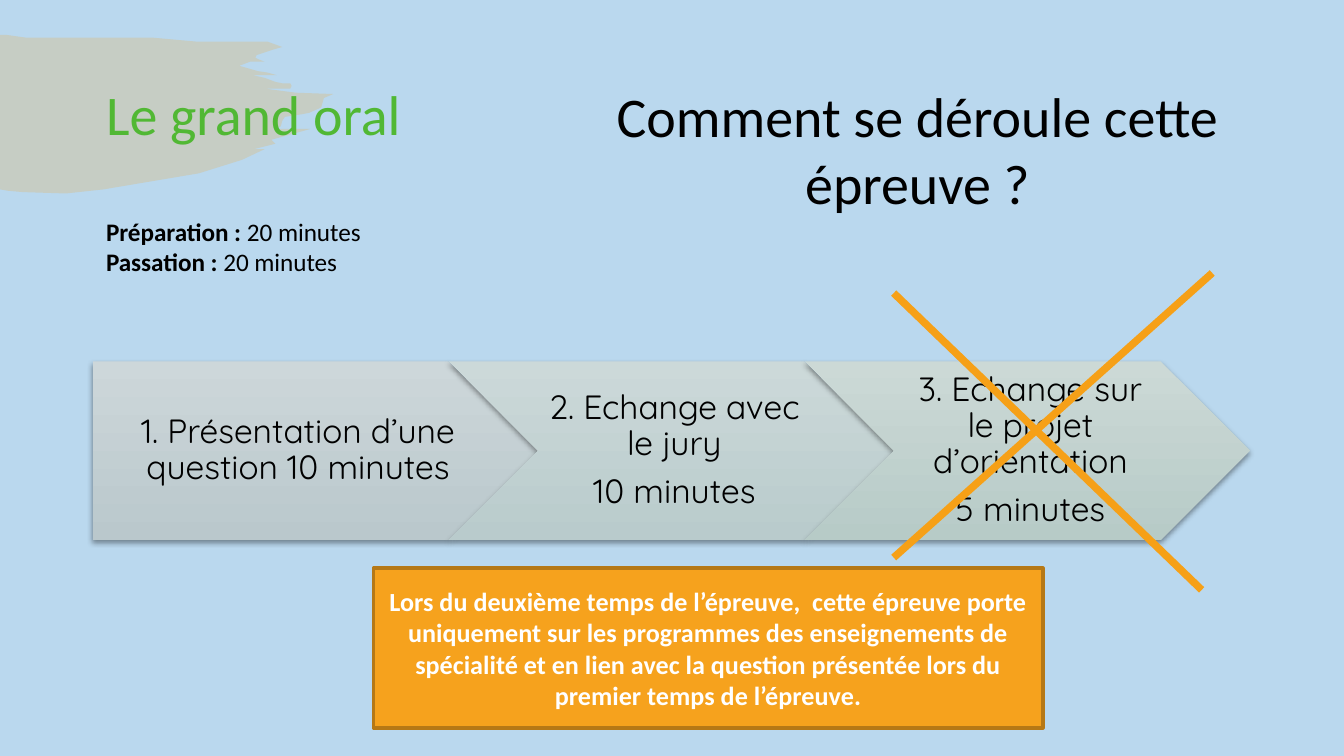
from lxml import etree
from pptx import Presentation
from pptx.dml.color import RGBColor
from pptx.enum.shapes import MSO_CONNECTOR, MSO_SHAPE
from pptx.enum.text import MSO_ANCHOR, MSO_AUTO_SIZE, PP_ALIGN
from pptx.oxml.ns import qn
from pptx.util import Cm, Pt

LEFT, CENTER = PP_ALIGN.LEFT, PP_ALIGN.CENTER
TOP, MIDDLE = MSO_ANCHOR.TOP, MSO_ANCHOR.MIDDLE
PENTAGON, CHEVRON = MSO_SHAPE.PENTAGON, MSO_SHAPE.CHEVRON
RECTANGLE = MSO_SHAPE.RECTANGLE
STRAIGHT = MSO_CONNECTOR.STRAIGHT

# Outline of the brush stroke, in hundredths of an inch
BRUSH_UNIT = Cm(0.0254)
BRUSH_OUTLINE = [
    (0, 26), (5, 26), (19, 28), (50, 28), (76, 28), (113, 28), (146, 31),
    (186, 31), (199, 31), (210, 35), (203, 37), (191, 41), (190, 43), (192, 44),
    (197, 46), (186, 46), (178, 49), (185, 51), (192, 53), (199, 54), (206, 56),
    (188, 56), (197, 58), (205, 61), (210, 62), (216, 62), (217, 64), (216, 66),
    (213, 66), (197, 66), (220, 69), (248, 70), (241, 73), (239, 80), (230, 84),
    (225, 85), (212, 87), (210, 90), (209, 94), (205, 96), (231, 96), (202, 104),
    (205, 107), (189, 111), (197, 111), (180, 119), (148, 129), (77, 141),
    (49, 144), (17, 143), (6, 142), (0, 141),
]

STEPS = [
    (PENTAGON, 0.28, ("CDD7DA", "BAC8CC"),
     ["1. Présentation d’une question 10 minutes"]),
    (CHEVRON, 0.2, ("CCD9D9", "B9CBCC"),
     ["2. Echange avec le jury", "10 minutes"]),
    (CHEVRON, 0.2, ("CCD9D6", "B7CBC7"),
     ["3. Echange sur le projet d’orientation", "5 minutes"]),
]
STEP_LEFT, STEP_TOP, STEP_PITCH = 1.75, 6.83, 6.73
STEP_WIDTH, STEP_HEIGHT = 8.41, 3.38

DURATIONS = [("Préparation : ", "20 minutes"), ("Passation : ", "20 minutes")]
NOTE = ("Lors du deuxième temps de l’épreuve,  cette épreuve porte uniquement "
        "sur les programmes des enseignements de spécialité et en lien avec la "
        "question présentée lors du premier temps de l’épreuve.")


def rgb(hex_code):
    return RGBColor.from_string(hex_code)


class OralSlide:
    FONT, STEP_FONT = "Calibri", "Quicksand"
    BACKGROUND, BLACK, WHITE = "BAD8EE", "000000", "FFFFFF"
    GREEN, ORANGE, DARK_ORANGE, CROSS = "51B834", "F6A21D", "B67815", "F6A017"

    def __init__(self, slide):
        self.slide = slide
        self.shapes = slide.shapes
        slide.background.fill.solid()
        slide.background.fill.fore_color.rgb = rgb(self.BACKGROUND)

    def place(self, holder, left, top, width, height):
        holder.left, holder.top = Cm(left), Cm(top)
        holder.width, holder.height = Cm(width), Cm(height)

    def style_paragraph(self, paragraph, size, color, align=CENTER, font=FONT,
                        bold=None):
        paragraph.alignment = align
        paragraph.font.name = font
        paragraph.font.size = Pt(size)
        paragraph.font.color.rgb = rgb(color)
        paragraph.font.bold = bold

    def set_text(self, owner, lines, size, color, anchor=MIDDLE, **style):
        """Fill a shape with one paragraph per line and return its text frame."""
        frame = owner.text_frame
        frame.word_wrap = True
        frame.auto_size = MSO_AUTO_SIZE.NONE
        frame.vertical_anchor = anchor
        frame.text = "\n".join(lines)
        for paragraph in frame.paragraphs:
            self.style_paragraph(paragraph, size, color, **style)
        return frame

    def brush(self):
        builder = self.shapes.build_freeform(*BRUSH_OUTLINE[0], scale=BRUSH_UNIT)
        builder.add_line_segments(BRUSH_OUTLINE[1:], close=True)
        stroke = builder.convert_to_shape()
        stroke.shadow.inherit = False
        stroke.line.fill.background()
        stroke.fill.solid()
        stroke.fill.fore_color.rgb = rgb(self.ORANGE)
        color = stroke.element.spPr.find(".//" + qn("a:srgbClr"))
        etree.SubElement(color, qn("a:alpha"), val="20000")
        self.shapes.element.insert(2, stroke.element)  # behind the title

    def title(self, text, *box):
        self.place(self.shapes.title, *box)
        self.set_text(self.shapes.title, [text], 30, self.GREEN, align=LEFT)

    def heading(self, text, *box):
        heading = self.shapes.add_textbox(*map(Cm, box))
        self.set_text(heading, [text], 30, self.BLACK)

    def durations(self, entries, *box):
        body = self.slide.placeholders[1]
        self.place(body, *box)
        labels = [label for label, _ in entries]
        frame = self.set_text(body, labels, 13.5, self.BLACK, TOP, align=LEFT)
        for paragraph, (_, value) in zip(frame.paragraphs, entries):
            paragraph.space_before = Pt(0)
            paragraph.runs[0].font.bold = True
            paragraph.add_run().text = value
            properties = paragraph._p.get_or_add_pPr()
            properties.set("marL", "0")
            properties.set("indent", "0")
            bullet = etree.Element(qn("a:buNone"))
            properties.find(qn("a:defRPr")).addprevious(bullet)

    def step(self, kind, inset, gradient, lines, *box):
        arrow = self.shapes.add_shape(kind, *map(Cm, box))
        arrow.line.fill.background()
        arrow.fill.gradient()
        arrow.fill.gradient_angle = 270
        for stop, color in zip(arrow.fill.gradient_stops, gradient):
            stop.color.rgb = rgb(color)
        self.drop_shadow(arrow)
        frame = self.set_text(arrow, lines, 18, self.BLACK, font=self.STEP_FONT)
        frame.margin_left, frame.margin_right = Cm(inset), Cm(0.08)
        for paragraph in frame.paragraphs:
            paragraph.line_spacing = 0.9
            paragraph.space_after = Pt(6.3)

    def drop_shadow(self, shape):
        shape.shadow.inherit = False
        effects = shape.element.spPr.find(qn("a:effectLst"))
        shadow = etree.SubElement(
            effects, qn("a:outerShdw"), blurRad=str(Pt(3.1)), dist=str(Pt(1.6)),
            dir="5400000", rotWithShape="0")
        color = etree.SubElement(shadow, qn("a:srgbClr"), val=self.BLACK)
        etree.SubElement(color, qn("a:alpha"), val="38000")

    def note(self, text, *box):
        panel = self.shapes.add_shape(RECTANGLE, *map(Cm, box))
        panel.shadow.inherit = False
        panel.fill.solid()
        panel.fill.fore_color.rgb = rgb(self.ORANGE)
        panel.line.color.rgb = rgb(self.DARK_ORANGE)
        panel.line.width = Pt(2)
        self.set_text(panel, [text], 14, self.WHITE, bold=True)

    def stroke(self, *ends):
        bar = self.shapes.add_connector(STRAIGHT, *map(Cm, ends))
        bar.line.color.rgb = rgb(self.CROSS)
        bar.line.width = Pt(4)
        etree.SubElement(bar._element.spPr, qn("a:effectLst"))


def main():
    deck = Presentation()
    deck.slide_width, deck.slide_height = Cm(25.4), Cm(14.29)
    oral = OralSlide(deck.slides.add_slide(deck.slide_layouts[1]))

    oral.brush()
    oral.title("Le grand oral", 1.75, 0.76, 21.9, 2.77)
    for index, step in enumerate(STEPS):
        oral.step(*step, STEP_LEFT + index * STEP_PITCH, STEP_TOP,
                  STEP_WIDTH, STEP_HEIGHT)
    oral.durations(DURATIONS, 1.75, 3.96, 7.5, 1.4)
    oral.note(NOTE, 7.06, 10.74, 12.65, 3.02)
    oral.heading("Comment se déroule cette épreuve ?", 10.57, -1.45, 13.54, 8.53)
    oral.stroke(22.91, 5.16, 16.89, 10.54)
    oral.stroke(16.89, 5.54, 22.71, 11.15)

    deck.save("out.pptx")


if __name__ == "__main__":
    main()
